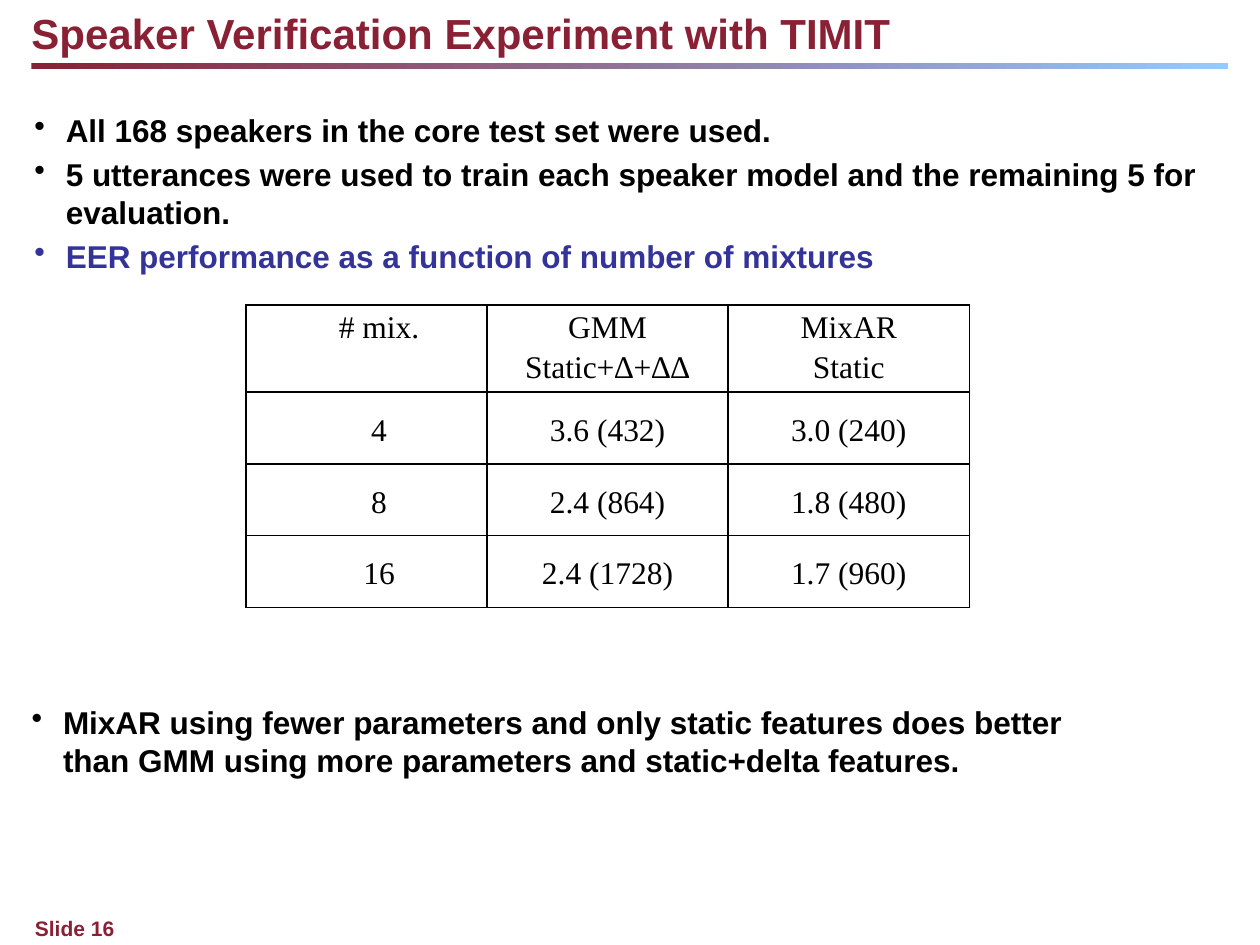
"""Builds the slide on the TIMIT speaker verification experiment."""
from lxml import etree
from pptx import Presentation
from pptx.dml.color import RGBColor
from pptx.enum import shapes, text
from pptx.oxml.ns import qn
from pptx.util import Pt

MAROON, SKY, BLACK, INDIGO = "892034", "95CAFF", "000000", "333399"
INDENT = Pt(18)
RESULTS = [
    ("# mix.", "GMM\vStatic+∆+∆∆", "MixAR\vStatic"),
    ("4", "3.6 (432)", "3.0 (240)"),
    ("8", "2.4 (864)", "1.8 (480)"),
    ("16", "2.4 (1728)", "1.7 (960)"),
]


def rgb(value):
    """Return the colour for a hex string."""
    return RGBColor.from_string(value)


def style_runs(paragraph, size, face, color, bold):
    """Format every run of a paragraph."""
    for run in paragraph.runs:
        font = run.font
        font.size, font.name, font.bold = Pt(size), face, bold
        font.color.rgb = rgb(color)


def add_bullet(paragraph):
    """Give a paragraph a round bullet with a hanging indent."""
    properties = paragraph._p.get_or_add_pPr()
    properties.set("marL", str(INDENT))
    properties.set("indent", str(-INDENT))
    etree.SubElement(properties, qn("a:buChar")).set("char", "•")


def add_text(slide, box, lines, size, bulleted=False):
    """Add a bold text box from (wording, colour) pairs."""
    frame = slide.shapes.add_textbox(*map(Pt, box)).text_frame
    frame.word_wrap = True
    frame.auto_size = text.MSO_AUTO_SIZE.SHAPE_TO_FIT_TEXT
    frame.margin_left = frame.margin_right = 0
    frame.margin_top = frame.margin_bottom = 0
    for index, (wording, color) in enumerate(lines):
        paragraph = frame.add_paragraph() if index else frame.paragraphs[0]
        paragraph.text = wording
        if bulleted:
            add_bullet(paragraph)
        if index:
            paragraph.space_before = Pt(0.2 * size)
        style_runs(paragraph, size, "Arial", color, True)


def add_title_rule(slide):
    """Add the gradient bar under the title."""
    bar = slide.shapes.add_shape(
        shapes.MSO_SHAPE.RECTANGLE, Pt(18), Pt(36), Pt(684), Pt(3.6))
    bar.shadow.inherit = False
    bar.line.fill.background()
    bar.fill.gradient()
    bar.fill.gradient_angle = 0
    for stop, color in zip(bar.fill.gradient_stops, (MAROON, SKY)):
        stop.color.rgb = rgb(color)


def add_borders(cell):
    """Draw a thin black line on all four sides of a cell."""
    properties = cell._tc.get_or_add_tcPr()
    for side in ("lnL", "lnR", "lnT", "lnB"):
        line = etree.SubElement(properties, qn(f"a:{side}"), w=str(Pt(1)))
        fill = etree.SubElement(line, qn("a:solidFill"))
        etree.SubElement(fill, qn("a:srgbClr"), val=BLACK)


def fill_cell(cell, wording, is_header, is_label):
    """Write and format one cell of the results table."""
    add_borders(cell)
    cell.fill.background()
    cell.margin_left = cell.margin_right = Pt(2.2 if is_label else 5)
    cell.margin_top = cell.margin_bottom = 0
    cell.vertical_anchor = (
        text.MSO_ANCHOR.TOP if is_header else text.MSO_ANCHOR.MIDDLE)
    paragraph = cell.text_frame.paragraphs[0]
    paragraph.text = wording
    paragraph.alignment = text.PP_ALIGN.CENTER
    paragraph.line_spacing = 1.15
    if is_label:
        paragraph._p.get_or_add_pPr().set("indent", str(Pt(14.4)))
    style_runs(paragraph, 18, "Times New Roman", BLACK, False)


def add_results(slide):
    """Add the table of error rates by number of mixtures."""
    table = slide.shapes.add_table(
        len(RESULTS), len(RESULTS[0]),
        Pt(140.5), Pt(174.2), Pt(413.4), Pt(173.1)).table
    table.first_row = table.horz_banding = False
    for column in table.columns:
        column.width = Pt(137.8)
    for row, values in enumerate(RESULTS):
        table.rows[row].height = Pt(41.1 if row else 49.8)
        for column, wording in enumerate(values):
            fill_cell(table.cell(row, column), wording, row == 0, column == 0)


def main():
    """Build and save the slide."""
    deck = Presentation()
    deck.slide_width, deck.slide_height = Pt(720), Pt(540)
    slide = deck.slides.add_slide(deck.slide_layouts[6])
    add_title_rule(slide)
    add_text(slide, (20, 523.4, 662, 14.4), [("Slide 16", MAROON)], 12)
    add_text(slide, (18, 4.5, 678, 29),
             [("Speaker Verification Experiment with TIMIT", MAROON)], 24)
    add_text(slide, (19.6, 63.5, 674, 96), [
        ("All 168 speakers in the core test set were used.", BLACK),
        ("5 utterances were used to train each speaker model and the "
         "remaining 5 for evaluation.", BLACK),
        ("EER performance as a function of number of mixtures", INDIGO),
    ], 18, bulleted=True)
    add_text(slide, (18, 402, 616, 44), [
        ("MixAR using fewer parameters and only static features does better "
         "than GMM using more parameters and static+delta features.", BLACK),
    ], 18, bulleted=True)
    add_results(slide)
    deck.save("out.pptx")


if __name__ == "__main__":
    main()
